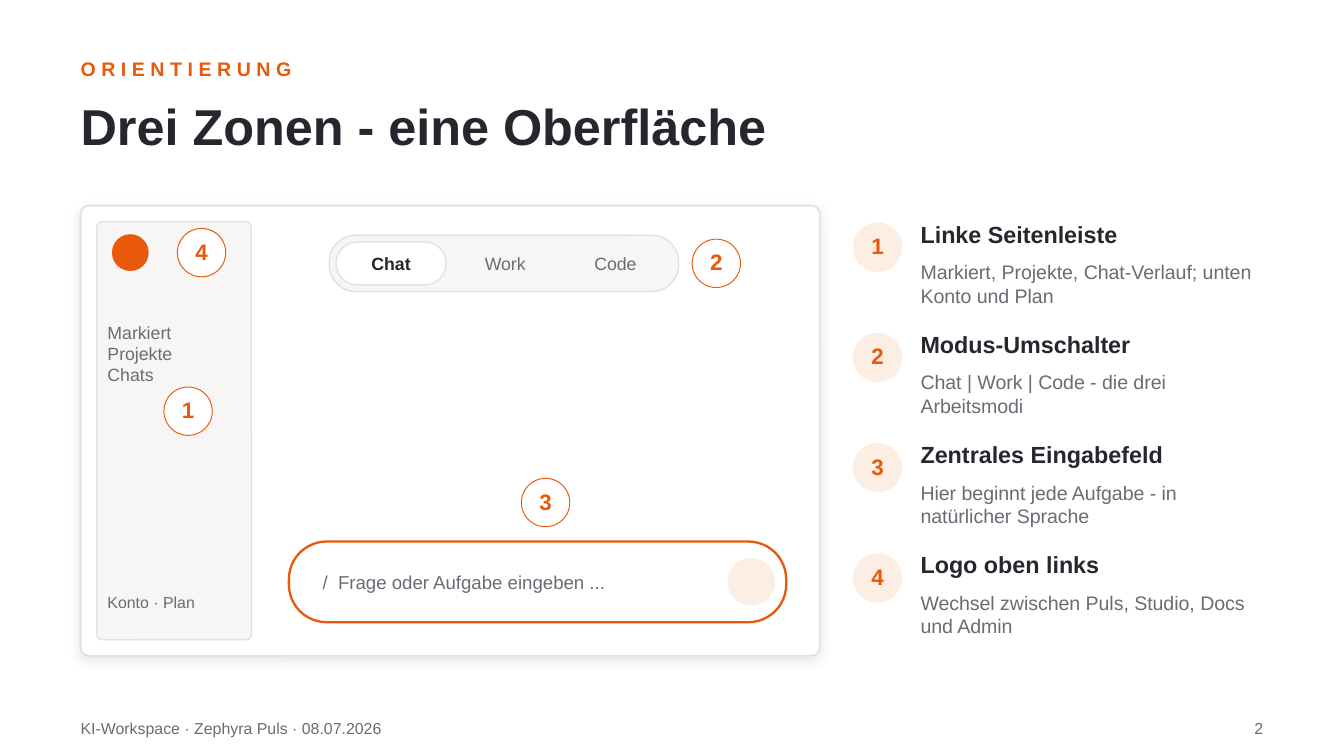
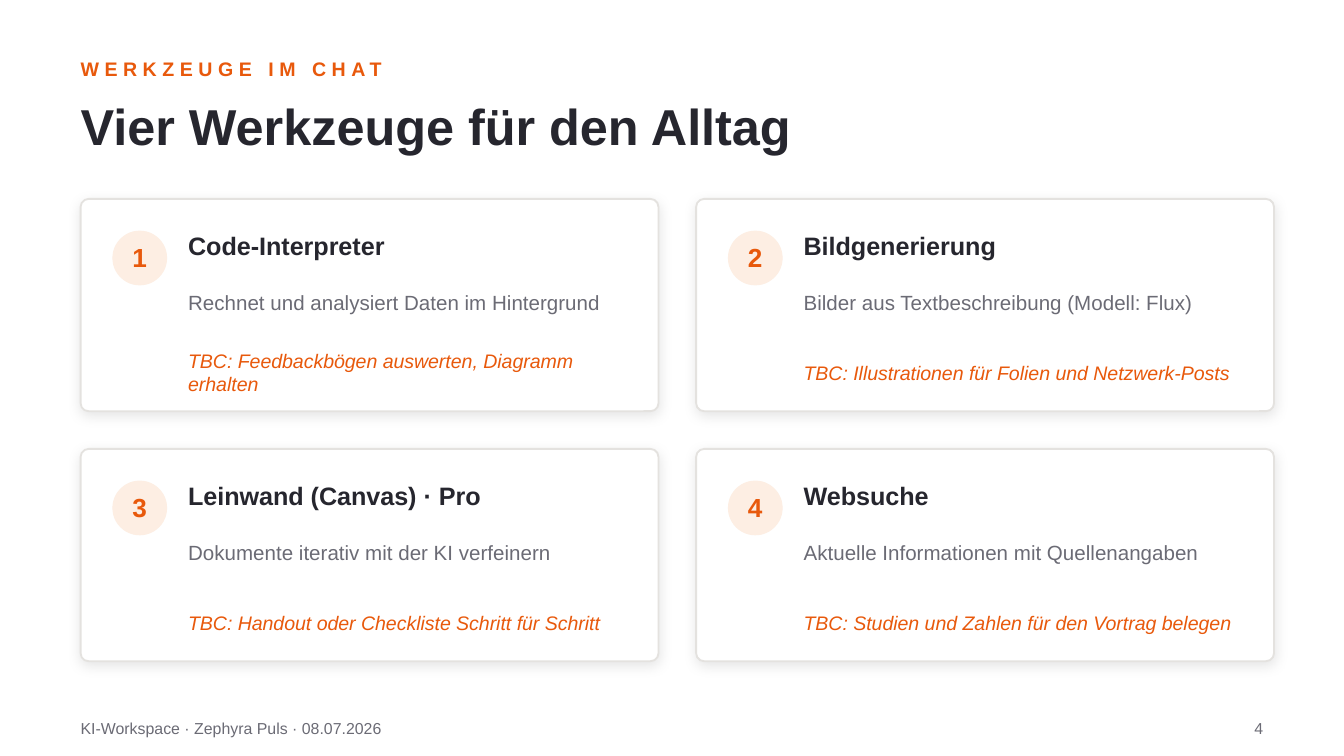
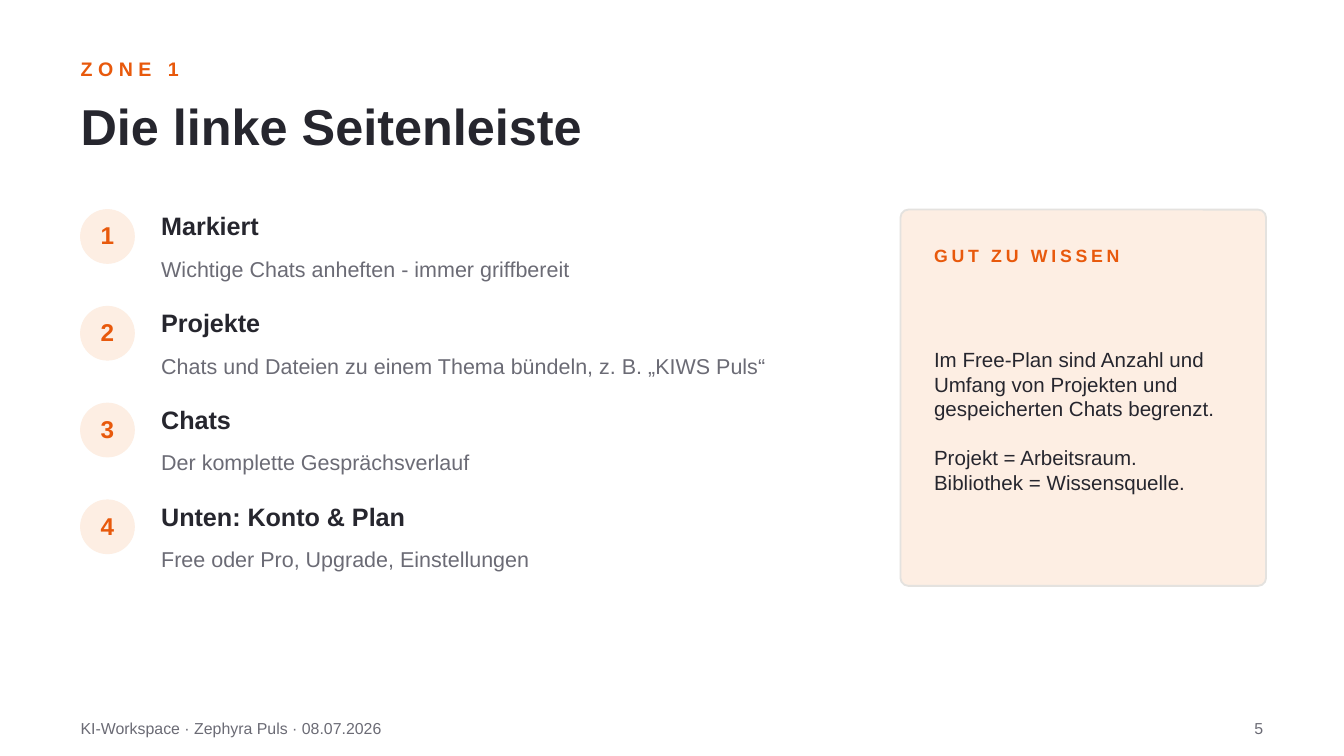
from lxml.etree import SubElement
from pptx import Presentation
from pptx.dml.color import RGBColor
from pptx.enum.shapes import MSO_SHAPE as SHAPE
from pptx.enum.text import MSO_ANCHOR as ANCHOR, MSO_AUTO_SIZE as AUTOSIZE, PP_ALIGN as ALIGN
from pptx.oxml.ns import qn
from pptx.util import Pt

FONT = "Arial"
C = {"accent": "E8590C", "tint": "FDEEE3", "ink": "26262E", "muted": "6B6B75",
     "line": "E4E2DF", "panel": "F7F6F4", "white": "FFFFFF", "shadow": "000000"}
FOOTER = "KI-Workspace · Zephyra Puls · 08.07.2026"
LEFT, WIDTH = 43.2, 633.6

ZONES = {
    "kicker": "ORIENTIERUNG", "title": "Drei Zonen - eine Oberfläche", "page": 2,
    "sidebar": ["Markiert", "Projekte", "Chats"],
    "account": "Konto · Plan",
    "modes": [("Chat", 180, 59.04), ("Work", 241.92, 57.6), ("Code", 300.96, 57.6)],
    "prompt": "/\tFrage oder Aufgabe eingeben ...",
    "markers": [(87.84, 207.36), (370.8, 128.16), (279.36, 256.32), (95.04, 122.4)],
    "legend": [
        ("Linke Seitenleiste", "Markiert, Projekte, Chat-Verlauf; unten Konto und Plan"),
        ("Modus-Umschalter", "Chat | Work | Code - die drei Arbeitsmodi"),
        ("Zentrales Eingabefeld", "Hier beginnt jede Aufgabe - in natürlicher Sprache"),
        ("Logo oben links", "Wechsel zwischen Puls, Studio, Docs und Admin"),
    ],
}
TOOLS = {
    "kicker": "WERKZEUGE IM CHAT", "title": "Vier Werkzeuge für den Alltag", "page": 4,
    "cards": [
        ("Code-Interpreter", "Rechnet und analysiert Daten im Hintergrund",
         "TBC: Feedbackbögen auswerten, Diagramm erhalten"),
        ("Bildgenerierung", "Bilder aus Textbeschreibung (Modell: Flux)",
         "TBC: Illustrationen für Folien und Netzwerk-Posts"),
        ("Leinwand (Canvas) · Pro", "Dokumente iterativ mit der KI verfeinern",
         "TBC: Handout oder Checkliste Schritt für Schritt"),
        ("Websuche", "Aktuelle Informationen mit Quellenangaben",
         "TBC: Studien und Zahlen für den Vortrag belegen"),
    ],
}
SIDEBAR = {
    "kicker": "ZONE 1", "title": "Die linke Seitenleiste", "page": 5,
    "entries": [
        ("Markiert", "Wichtige Chats anheften - immer griffbereit"),
        ("Projekte", "Chats und Dateien zu einem Thema bündeln, z. B. „KIWS Puls“"),
        ("Chats", "Der komplette Gesprächsverlauf"),
        ("Unten: Konto & Plan", "Free oder Pro, Upgrade, Einstellungen"),
    ],
    "note_head": "GUT ZU WISSEN",
    "note": ["Im Free-Plan sind Anzahl und Umfang von Projekten und gespeicherten Chats begrenzt.",
             "Projekt = Arbeitsraum.", "Bibliothek = Wissensquelle."],
}


def rgb(name):
    return RGBColor.from_string(C[name])


def write(sp, lines, size, color, bold=False, italic=False, align=ALIGN.LEFT,
          spacing=0, insets=(0, 0, 0, 0), wrap=True):
    tf = sp.text_frame
    tf.auto_size = AUTOSIZE.NONE
    tf.word_wrap = wrap
    tf.vertical_anchor = ANCHOR.MIDDLE
    tf.margin_left, tf.margin_top, tf.margin_right, tf.margin_bottom = map(Pt, insets)
    for i, line in enumerate([lines] if isinstance(lines, str) else lines):
        p = tf.paragraphs[0] if i == 0 else tf.add_paragraph()
        p.alignment = align
        r = p.add_run()
        r.text = line
        f = r.font
        f.name, f.size, f.bold, f.italic = FONT, Pt(size), bold, italic
        f.color.rgb = rgb(color)
        if spacing:
            r._r.get_or_add_rPr().set("spc", str(spacing * 100))
    return tf


def text(s, box, lines, size, color, **style):
    return write(s.shapes.add_textbox(*map(Pt, box)), lines, size, color, **style)


def shape(s, kind, box, fill, line, weight, radius=None):
    sp = s.shapes.add_shape(kind, *map(Pt, box))
    sp.shadow.inherit = False
    sp.fill.solid()
    sp.fill.fore_color.rgb = rgb(fill)
    sp.line.color.rgb = rgb(line)
    sp.line.width = Pt(weight)
    if radius is not None:
        sp.adjustments[0] = radius
    return sp


def rounded(s, box, fill, line, weight, radius):
    return shape(s, SHAPE.ROUNDED_RECTANGLE, box, fill, line, weight, radius)


def card(s, box, radius):
    sp = rounded(s, box, "white", "line", 1, radius)
    effects = sp._element.spPr.find(qn("a:effectLst"))
    shadow = SubElement(effects, qn("a:outerShdw"), blurRad=str(Pt(7)), dist=str(Pt(2)),
                        dir="5400000", algn="bl", rotWithShape="0")
    color = SubElement(shadow, qn("a:srgbClr"), val=C["shadow"])
    SubElement(color, qn("a:alpha"), val="10000")


def badge(s, x, y, number, diameter, size, fill="tint", line="tint"):
    sp = shape(s, SHAPE.OVAL, (x, y, diameter, diameter), fill, line, 0.5)
    write(sp, str(number), size, "accent", bold=True, align=ALIGN.CENTER,
          insets=(0, 0, 0, 1.44), wrap=False)


def new_slide(prs, content):
    s = prs.slides.add_slide(prs.slide_layouts[5])
    s.background.fill.solid()
    s.background.fill.fore_color.rgb = rgb("white")
    title = s.shapes.title
    title.left, title.top, title.width, title.height = map(Pt, (LEFT, 44.64, WIDTH, 44.64))
    write(title, content["title"], 27, "ink", bold=True)
    text(s, (LEFT, 27.36, WIDTH, 18.72), content["kicker"], 10.5, "accent", bold=True, spacing=3)
    text(s, (LEFT, 381.6, 432, 17.28), FOOTER, 8.5, "muted")
    text(s, (633.6, 381.6, 43.2, 17.28), str(content["page"]), 8.5, "muted", align=ALIGN.RIGHT)
    return s


def zones_slide(prs):
    s = new_slide(prs, ZONES)
    card(s, (LEFT, 110.16, 396, 241.2), 0.018)
    rounded(s, (51.84, 118.8, 82.8, 223.92), "panel", "line", 0.75, 0.035)
    text(s, (57.6, 146.16, 72, 86.4), ZONES["sidebar"], 9.5, "muted")
    text(s, (57.6, 311.76, 72, 21.6), ZONES["account"], 8.5, "muted")
    shape(s, SHAPE.OVAL, (60.48, 126, 18.72, 18.72), "accent", "accent", 1)

    rounded(s, (176.4, 126, 187.2, 30.24), "panel", "line", 0.75, 0.476)
    for i, (mode, x, w) in enumerate(ZONES["modes"]):
        box = (x, 129.6, w, 23.04)
        if i == 0:
            pill = rounded(s, box, "white", "line", 0.75, 0.5)
            write(pill, mode, 9.5, "ink", bold=True, align=ALIGN.CENTER)
        else:
            text(s, box, mode, 9.5, "muted", align=ALIGN.CENTER)

    rounded(s, (154.8, 290.16, 266.4, 43.2), "white", "accent", 1.25, 0.467)
    tf = text(s, (172.8, 290.16, 208.8, 43.2), ZONES["prompt"], 10, "muted")
    tabs = SubElement(tf.paragraphs[0]._p.get_or_add_pPr(), qn("a:tabLst"))
    SubElement(tabs, qn("a:tab"), pos=str(Pt(8.34)), algn="l")
    shape(s, SHAPE.OVAL, (390.24, 299.52, 24.48, 24.48), "tint", "tint", 1)

    for number, (x, y) in enumerate(ZONES["markers"], 1):
        badge(s, x, y, number, 25.92, 12, "white", "accent")
    for i, (head, body) in enumerate(ZONES["legend"]):
        y = 119.52 + i * 59.04
        badge(s, 457.2, y, i + 1, 25.92, 12)
        text(s, (493.2, y - 4.32, 187.2, 20.16), head, 12.5, "ink", bold=True)
        text(s, (493.2, y + 14.4, 187.2, 36), body, 10.5, "muted")


def tools_slide(prs):
    s = new_slide(prs, TOOLS)
    w, h, gap = 309.6, 113.76, 20.16
    for i, (head, body, example) in enumerate(TOOLS["cards"]):
        row, col = divmod(i, 2)
        x, y = LEFT + col * (w + gap), 106.56 + row * (h + gap)
        card(s, (x, y, w, h), 0.038)
        badge(s, x + 17.28, y + 17.28, i + 1, 28.8, 14)
        text(s, (x + 57.6, y + 14.4, 237.6, 21.6), head, 13.5, "ink", bold=True)
        text(s, (x + 57.6, y + 37.44, 237.6, 36), body, 11, "muted")
        text(s, (x + 57.6, y + 77.76, 237.6, 30.24), example, 10.5, "accent", italic=True)


def sidebar_slide(prs):
    s = new_slide(prs, SIDEBAR)
    top = 112.32
    for i, (head, body) in enumerate(SIDEBAR["entries"]):
        y = top + i * 51.84
        badge(s, LEFT, y, i + 1, 28.8, 13)
        text(s, (86.4, y - 2.88, 187.2, 23.04), head, 13.5, "ink", bold=True)
        text(s, (86.4, y + 17.28, 388.8, 28.8), body, 11.5, "muted")
    rounded(s, (482.4, top, 195.84, 201.6), "tint", "line", 1, 0.022)
    text(s, (500.4, 128.16, 165.6, 17.28), SIDEBAR["note_head"], 9.5, "accent",
         bold=True, spacing=2)
    tf = text(s, (500.4, 149.76, 165.6, 151.2), SIDEBAR["note"], 11, "ink")
    tf.paragraphs[1].space_before = Pt(13)


def main():
    prs = Presentation()
    prs.slide_width, prs.slide_height = Pt(720), Pt(405)
    zones_slide(prs)
    tools_slide(prs)
    sidebar_slide(prs)
    prs.save("out.pptx")


if __name__ == "__main__":
    main()
